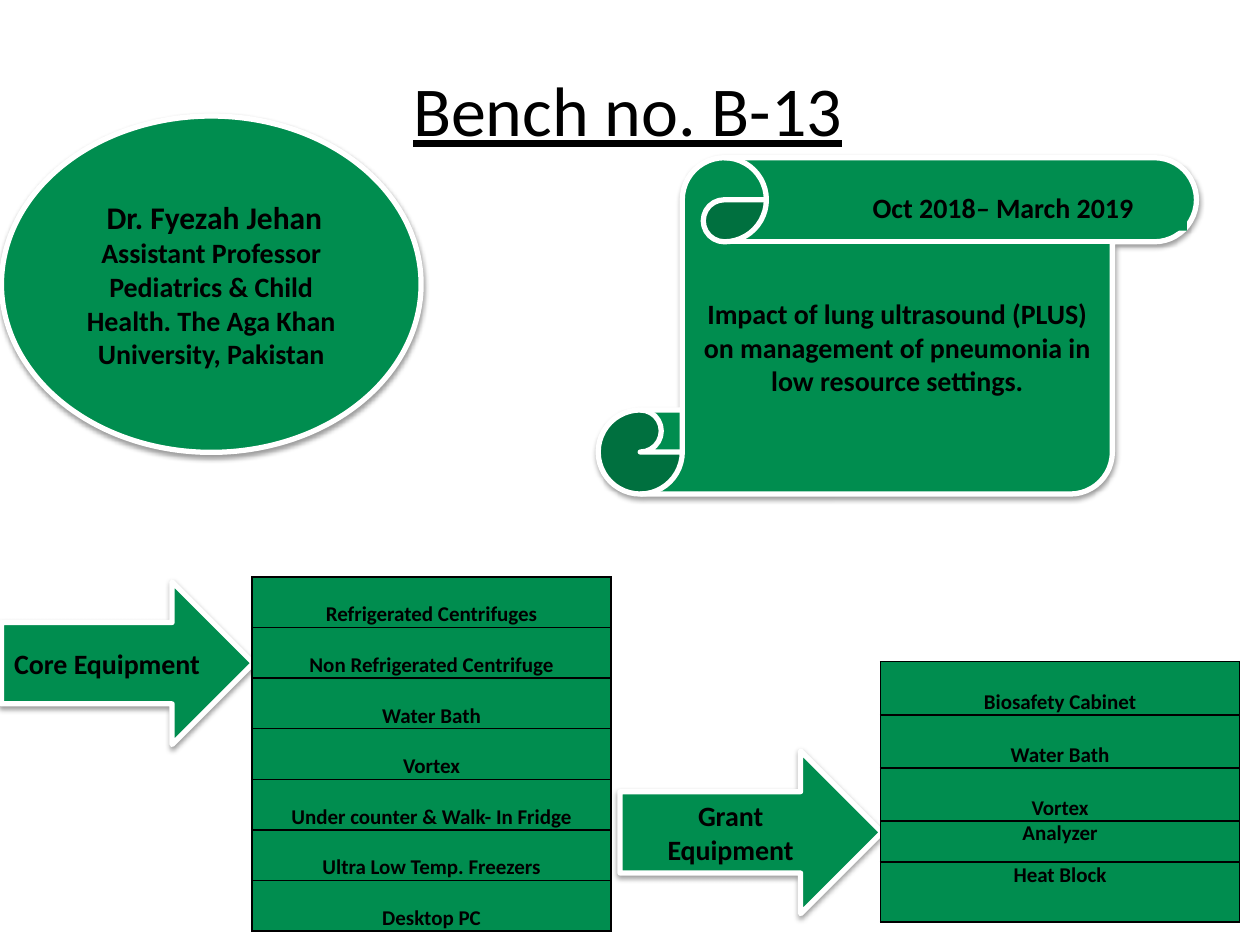
"""Build the slide that describes bench B-13."""
from dataclasses import dataclass

from lxml import etree
from pptx import Presentation
from pptx.dml.color import RGBColor
from pptx.enum import shapes, text
from pptx.oxml import ns
from pptx.util import Cm, Pt


@dataclass(frozen=True)
class Theme:
    """Hold the colours, font and type sizes of the slide."""
    green: RGBColor = RGBColor(0x00, 0x8D, 0x4F)
    white: RGBColor = RGBColor(0xFF, 0xFF, 0xFF)
    black: RGBColor = RGBColor(0x00, 0x00, 0x00)
    font: str = "Calibri"
    title: int = 40
    name: int = 18
    body: int = 16
    cell: int = 12


THEME = Theme()
CENTER = text.PP_ALIGN.CENTER
BOTTOM = text.MSO_ANCHOR.BOTTOM
TOP = text.MSO_ANCHOR.TOP


def add_span(para, words, size, bold=True, italic=None, underline=None):
    """Add one styled run to a paragraph."""
    span = para.add_run()
    span.text = words
    font = span.font
    font.name, font.size = THEME.font, Pt(size)
    font.bold, font.italic, font.underline = bold, italic, underline
    font.color.rgb = THEME.black


def add_shadow(box):
    """Give a shape a soft shadow that falls straight down."""
    effects = box._element.spPr.find(ns.qn("a:effectLst"))
    shadow = etree.SubElement(
        effects, ns.qn("a:outerShdw"), blurRad=str(Pt(3.1)),
        dist=str(Pt(1.6)), dir="5400000", rotWithShape="0")
    color = etree.SubElement(shadow, ns.qn("a:srgbClr"), val=str(THEME.black))
    etree.SubElement(color, ns.qn("a:alpha"), val="38000")


def add_box(page, kind, place, paragraphs, outlined=True):
    """Add a green shape whose paragraphs are lists of run arguments."""
    box = page.shapes.add_shape(kind, *map(Cm, place))
    box.shadow.inherit = False
    box.fill.solid()
    box.fill.fore_color.rgb = THEME.green
    if outlined:
        box.line.color.rgb = THEME.white
        box.line.width = Pt(3)
        add_shadow(box)
    else:
        box.line.fill.background()
    frame = box.text_frame
    frame.word_wrap = True
    frame.vertical_anchor = text.MSO_ANCHOR.MIDDLE
    for index, spans in enumerate(paragraphs):
        para = frame.add_paragraph() if index else frame.paragraphs[0]
        para.alignment = CENTER
        for span in spans:
            add_span(para, *span)
    return box


def add_title(page, place, words):
    """Add the underlined title."""
    box = page.shapes.add_textbox(*map(Cm, place))
    frame = box.text_frame
    frame.word_wrap = False
    frame.auto_size = text.MSO_AUTO_SIZE.SHAPE_TO_FIT_TEXT
    add_span(frame.paragraphs[0], words, THEME.title, None, None, True)


def add_borders(cell):
    """Draw a thin black line on every side of a cell."""
    properties = cell._tc.get_or_add_tcPr()
    for index, side in enumerate("LRTB"):
        line = etree.Element(ns.qn(f"a:ln{side}"), w=str(Pt(1)))
        fill = etree.SubElement(line, ns.qn("a:solidFill"))
        etree.SubElement(fill, ns.qn("a:srgbClr"), val=str(THEME.black))
        properties.insert(index, line)


def add_list(page, left, top, rows):
    """Add a one-column table from (words, height, anchor) rows."""
    width = Cm(7.24)
    height = Cm(sum(row[1] for row in rows))
    table = page.shapes.add_table(
        len(rows), 1, Cm(left), Cm(top), width, height).table
    table.first_row = table.horz_banding = False
    for index, (words, tall, anchor) in enumerate(rows):
        table.rows[index].height = Cm(tall)
        cell = table.cell(index, 0)
        cell.fill.solid()
        cell.fill.fore_color.rgb = THEME.green
        cell.vertical_anchor = anchor
        cell.margin_left = cell.margin_right = Cm(0.18)
        cell.margin_top = cell.margin_bottom = 0
        para = cell.text_frame.paragraphs[0]
        para.alignment = CENTER
        add_span(para, words, THEME.cell)
        add_borders(cell)


def main():
    """Compose the slide and save the deck."""
    deck = Presentation()
    deck.slide_width, deck.slide_height = Cm(25.4), Cm(19.05)
    page = deck.slides.add_slide(deck.slide_layouts[6])
    kinds = shapes.MSO_SHAPE
    body = THEME.body

    add_box(page, kinds.OVAL, (0.03, 2.34, 8.46, 6.78), [
        [(" ", body), ("Dr. Fyezah Jehan", THEME.name)],
        [("Assistant Professor Pediatrics & Child Health. "
          "The Aga Khan University, Pakistan", body)]])
    scroll = add_box(page, kinds.VERTICAL_SCROLL, (12.06, 3.18, 12.06, 6.78), [
        [("Impact of lung ultrasound (PLUS) on management of pneumonia "
          "in low resource settings.", body)]])
    scroll.adjustments[0] = 0.25

    add_box(page, kinds.RIGHT_ARROW, (0.03, 11.73, 5.08, 3.28),
            [[("Core Equipment", body)]])
    core = ("Refrigerated Centrifuges", "Non Refrigerated Centrifuge",
            "Water Bath", "Vortex", "Under counter & Walk- In Fridge",
            "Ultra Low Temp. Freezers", "Desktop PC")
    add_list(page, 5.08, 11.63, [(words, 1.02, BOTTOM) for words in core])

    dates = add_box(page, kinds.RECTANGLE, (16.51, 3.71, 7.42, 0.94), [
        [("Oct 2018", body), ("– ", body, True, True), ("March 2019", body)]],
        outlined=False)
    dates.text_frame.vertical_anchor = TOP
    dates.text_frame.auto_size = text.MSO_AUTO_SIZE.SHAPE_TO_FIT_TEXT
    add_title(page, (8.08, 1.22, 9.25, 1.96), "Bench no. B-13")

    add_box(page, kinds.RIGHT_ARROW, (12.5, 15.14, 5.28, 3.28),
            [[("Grant Equipment", body)]])
    grant = [(words, 1.07, BOTTOM)
             for words in ("Biosafety Cabinet", "Water Bath", "Vortex")]
    grant += [("Analyzer", 0.83, TOP), ("Heat Block", 1.21, TOP)]
    add_list(page, 17.75, 13.34, grant)

    deck.save("out.pptx")


if __name__ == "__main__":
    main()
